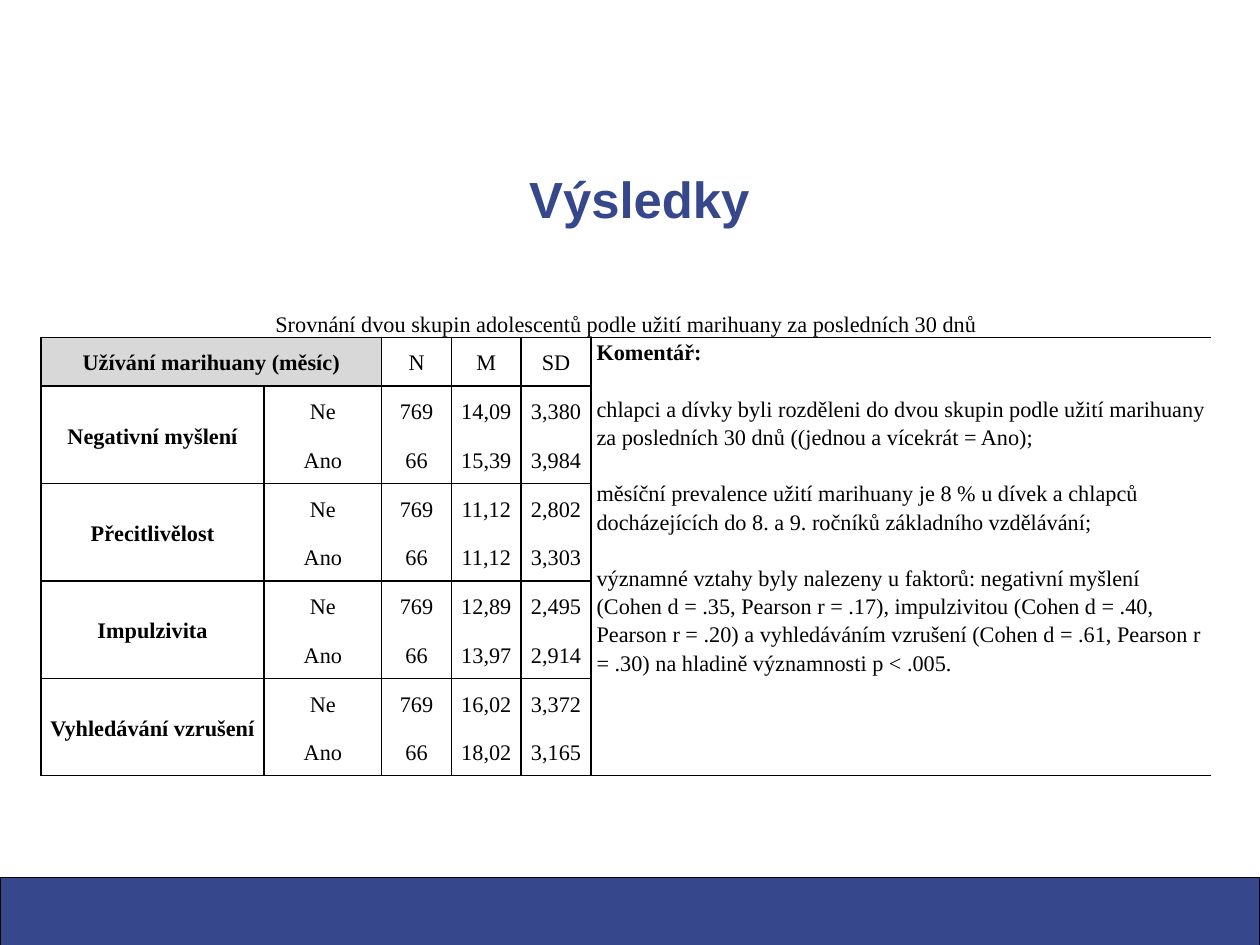
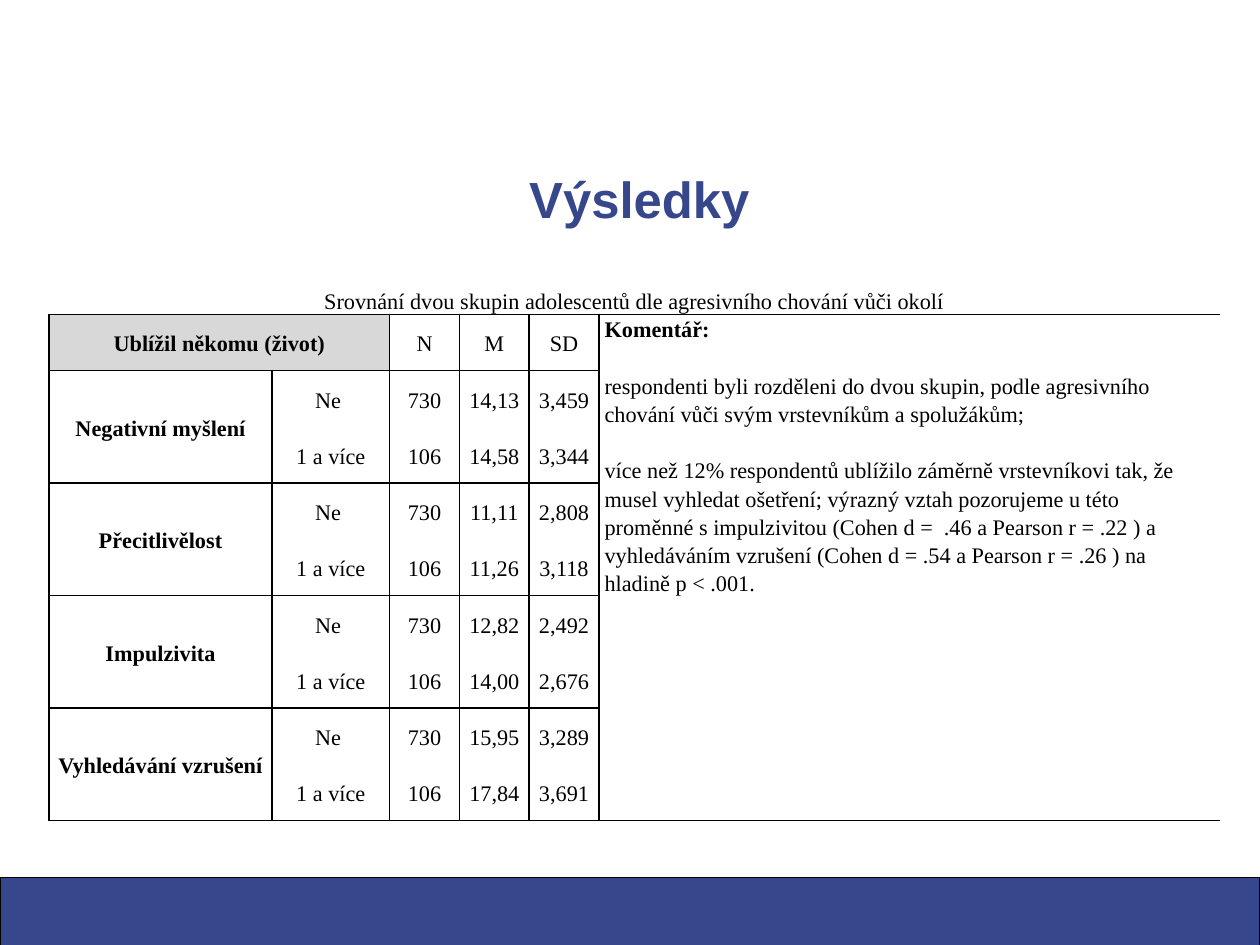
"""Build two result slides that compare groups of adolescents."""
from lxml import etree
from pptx import Presentation, util as u
from pptx.dml.color import RGBColor
from pptx.enum import shapes, text
from pptx.oxml import ns

INK = {"blue": "36478B", "black": "000000", "grey": "D8D8D8"}
PLAIN = "{2D5ABB26-0587-4C30-8999-92F81FD0307C}"
COLS = [1.95, 1.03, 0.61, 0.61, 0.61, 5.43]
TRAITS = ["Negativní myšlení", "Přecitlivělost", "Impulzivita", "Vyhledávání vzrušení"]

PAGES = [
    {
        "at": (0.36, 2.1), "high": 4.69, "top": 0.85,
        "head": "Srovnání dvou skupin adolescentů podle užití marihuany za posledních 30 dnů",
        "group": "Užívání marihuany (měsíc)",
        "kinds": [("Ne", "769"), ("Ano", "66")],
        "stats": [
            ("14,09", "3,380"), ("15,39", "3,984"),
            ("11,12", "2,802"), ("11,12", "3,303"),
            ("12,89", "2,495"), ("13,97", "2,914"),
            ("16,02", "3,372"), ("18,02", "3,165"),
        ],
        "notes": [
            "chlapci a dívky byli rozděleni do dvou skupin podle užití marihuany "
            "za posledních 30 dnů ((jednou a vícekrát = Ano);",
            "měsíční prevalence užití marihuany je 8 % u dívek a chlapců "
            "docházejících do 8. a 9. ročníků základního vzdělávání;",
            "významné vztahy byly nalezeny u faktorů: negativní myšlení "
            "(Cohen d = .35, Pearson r = .17), impulzivitou (Cohen d = .40, "
            "Pearson r = .20) a vyhledáváním vzrušení (Cohen d = .61, "
            "Pearson r = .30) na hladině významnosti p < .005.",
        ],
    },
    {
        "at": (0.43, 2.26), "high": 4.92, "top": 0.49,
        "head": "Srovnání dvou skupin adolescentů dle agresivního chování vůči okolí",
        "group": "Ublížil někomu (život)",
        "kinds": [("Ne ", "730"), ("1 a více", "106")],
        "stats": [
            ("14,13", "3,459"), ("14,58", "3,344"),
            ("11,11", "2,808"), ("11,26", "3,118"),
            ("12,82", "2,492"), ("14,00", "2,676"),
            ("15,95", "3,289"), ("17,84", "3,691"),
        ],
        "notes": [
            "respondenti byli rozděleni do dvou skupin, podle agresivního "
            "chování vůči svým vrstevníkům a spolužákům;",
            "více než 12% respondentů ublížilo záměrně vrstevníkovi tak, že "
            "musel vyhledat ošetření; výrazný vztah pozorujeme u této proměnné "
            "s impulzivitou (Cohen d =  .46 a Pearson r = .22 ) a vyhledáváním "
            "vzrušení (Cohen d = .54 a Pearson r = .26 ) na hladině p < .001.",
        ],
    },
]


def write(para, words, size, face, ink, bold, gap, align):
    para.alignment = align
    para.line_spacing = gap
    run = para.add_run()
    run.text = words
    run.font.size = u.Pt(size)
    run.font.name = face
    run.font.bold = bold
    run.font.color.rgb = RGBColor.from_string(INK[ink])


def edge(cell, sides):
    props = cell._tc.get_or_add_tcPr()
    for side in "LRTB":
        line = etree.SubElement(props, ns.qn("a:ln" + side), w=str(u.Pt(1)))
        if side in sides:
            fill = etree.SubElement(line, ns.qn("a:solidFill"))
            etree.SubElement(fill, ns.qn("a:srgbClr"), val=INK["black"])
        else:
            etree.SubElement(line, ns.qn("a:noFill"))


deck = Presentation()
deck.slide_width, deck.slide_height = u.Cm(28), u.Cm(21)
plan = deck.slide_layouts[5]
mid, left = text.PP_ALIGN.CENTER, text.PP_ALIGN.LEFT

base = plan.placeholders[0]
base.left, base.top = u.Inches(0.36), u.Inches(1.48)
base.width, base.height = u.Inches(10.47), u.Inches(0.55)
frame = base.text_frame
frame.margin_left = frame.margin_right = frame.margin_top = frame.margin_bottom = 0
frame.vertical_anchor = text.MSO_ANCHOR.MIDDLE

for num, page in enumerate(PAGES):
    slide = deck.slides.add_slide(plan)
    if num == 0:
        band = slide.shapes.add_shape(
            shapes.MSO_SHAPE.RECTANGLE, 0, u.Inches(7.68), deck.slide_width, u.Inches(0.59))
        band.shadow.inherit = False
        band.fill.solid()
        band.fill.fore_color.rgb = RGBColor.from_string(INK["blue"])
        band.line.color.rgb = RGBColor.from_string(INK["black"])
        band.line.width = u.Pt(0.75)
        deck.slide_master.shapes.element.insert(2, band.element)

    write(slide.shapes.title.text_frame.paragraphs[0],
          "Výsledky", 32, "Arial", "blue", True, 0.96, mid)

    x, y = page["at"]
    grid = slide.shapes.add_table(
        10, 6, u.Inches(x), u.Inches(y), u.Inches(sum(COLS)), u.Inches(page["high"])).table
    grid.first_row = grid.horz_banding = False
    grid._tbl.tblPr.find(ns.qn("a:tableStyleId")).text = PLAIN
    for col, wide in zip(grid.columns, COLS):
        col.width = u.Inches(wide)
    for row in grid.rows:
        row.height = u.Inches((page["high"] - page["top"]) / 9)
    grid.rows[0].height = u.Inches(page["top"])

    grid.cell(0, 0).merge(grid.cell(0, 5))
    grid.cell(1, 0).merge(grid.cell(1, 1))
    grid.cell(1, 5).merge(grid.cell(9, 5))
    for r in range(2, 10, 2):
        grid.cell(r, 0).merge(grid.cell(r + 1, 0))

    rows = [[page["head"]], [page["group"], "", "N", "M", "SD", "Komentář:"]]
    for i, pair in enumerate(page["stats"]):
        trait = "" if i % 2 else TRAITS[i // 2]
        rows.append([trait, *page["kinds"][i % 2], *pair])

    for r in range(10):
        for c in range(6):
            cell = grid.cell(r, c)
            if r == 0:
                edge(cell, "B")
            elif c == 5:
                edge(cell, "LTB")
            elif c == 0 or r == 1:
                edge(cell, "LRTB")
            else:
                edge(cell, "LRB" if r % 2 else "LRT")
            if (r, c) == (1, 0):
                cell.fill.solid()
                cell.fill.fore_color.rgb = RGBColor.from_string(INK["grey"])
            else:
                cell.fill.background()
            cell.margin_left = cell.margin_right = u.Inches(0.05)
            cell.margin_top = cell.margin_bottom = 0
            cell.vertical_anchor = text.MSO_ANCHOR.MIDDLE
            if c < len(rows[r]) and rows[r][c]:
                bold = r > 0 and c in (0, 5)
                write(cell.text_frame.paragraphs[0], rows[r][c], 14, "Times New Roman",
                      "black", bold, 1.15, left if c == 5 else mid)

    grid.cell(0, 0).vertical_anchor = text.MSO_ANCHOR.BOTTOM
    side = grid.cell(1, 5)
    side.vertical_anchor = text.MSO_ANCHOR.TOP
    for note in page["notes"]:
        para = side.text_frame.add_paragraph()
        para.space_before = u.Pt(17.8)
        write(para, note, 14, "Times New Roman", "black", False, 1.15, left)

deck.save("out.pptx")
